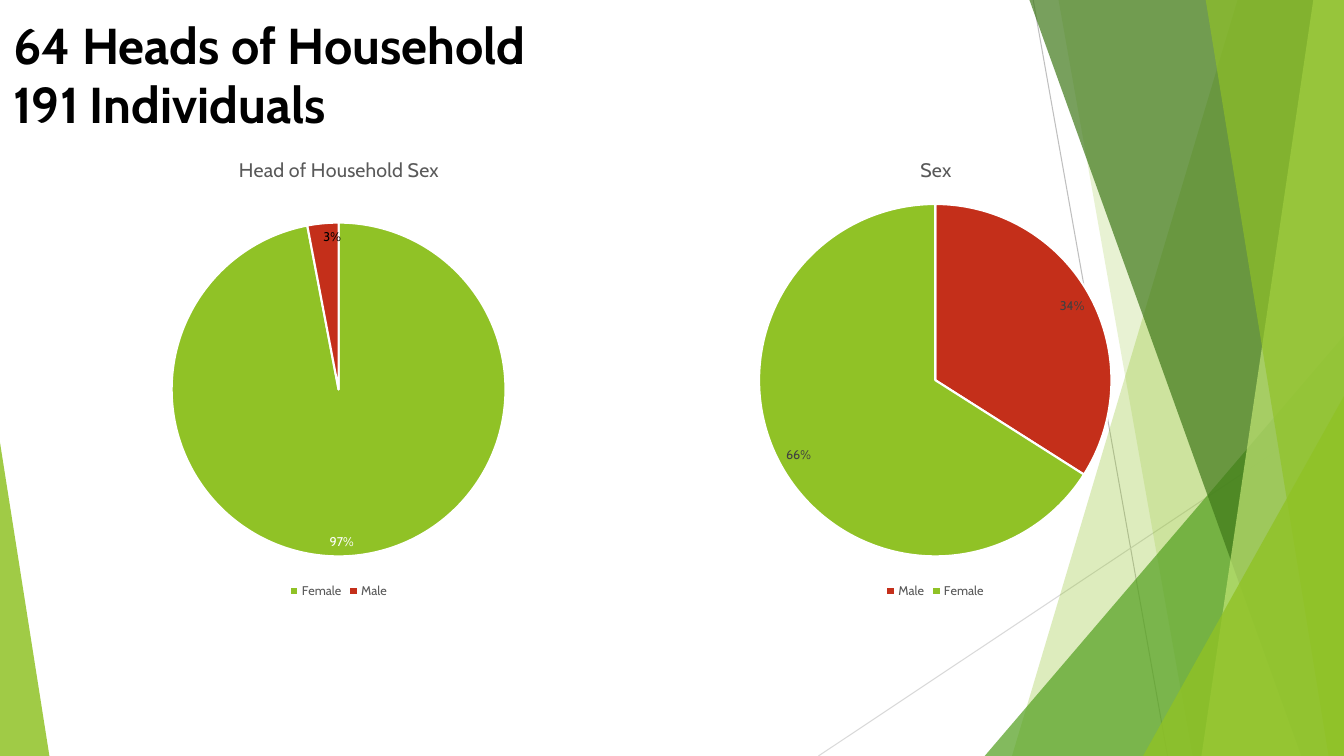
from lxml import etree
from pptx import Presentation
from pptx import util as u
from pptx.chart import data
from pptx.dml import color
from pptx.enum import chart as charts, shapes, text
from pptx.oxml import ns

GREEN, RED, LEAF = "90C226", "C42F1A", "54A021"
SEX_COLOURS = {"Female": GREEN, "Male": RED}
BLEED, BOTTOM, RIGHT = -0.7, 540, 960


class HouseholdSlide:
    """Draws the elements of one slide in a shared style, with lengths in points."""

    font = "Cabin"
    label_size = 9

    def __init__(self, deck):
        self.slide = deck.slides.add_slide(deck.slide_layouts[5])

    def apply(self, target, values):
        for name, value in values.items():
            setattr(target, name, value)

    def paint(self, fill, hex_colour, opacity=100):
        fill.solid()
        fill.fore_color.rgb = color.RGBColor.from_string(hex_colour)
        if opacity < 100:
            tint = fill._xPr.find(".//" + ns.qn("a:srgbClr"))
            etree.SubElement(tint, ns.qn("a:alpha"), val=str(opacity * 1000))

    def style_font(self, font, size, hex_colour, bold=False):
        self.apply(font, {"name": self.font, "size": u.Pt(size), "bold": bold})
        self.paint(font.fill, hex_colour)

    def finish(self, facet, hex_colour, opacity):
        facet.shadow.inherit = False
        self.paint(facet.fill, hex_colour, opacity)
        facet.line.fill.background()

    def ray(self, start, end, hex_colour):
        ends = [u.Pt(value) for value in (*start, *end)]
        ray = self.slide.shapes.add_connector(shapes.MSO_CONNECTOR.STRAIGHT, *ends)
        ray.line.width = u.Pt(0.75)
        self.paint(ray.line.fill, hex_colour)
        etree.SubElement(ray._element.spPr, ns.qn("a:effectLst"))

    def band(self, top_x, bottom_x, hex_colour, opacity):
        corners = [(top_x, BLEED), (RIGHT, BLEED), (RIGHT, BOTTOM), (bottom_x, BOTTOM)]
        first, *rest = [(u.Pt(x), u.Pt(y)) for x, y in corners]
        outline = self.slide.shapes.build_freeform(*first)
        outline.add_line_segments(rest, close=True)
        self.finish(outline.convert_to_shape(), hex_colour, opacity)

    def corner(self, left, top, width, apex, hex_colour, opacity):
        place = [u.Pt(value) for value in (left, top, width, BOTTOM - top)]
        corner = self.slide.shapes.add_shape(shapes.MSO_SHAPE.ISOSCELES_TRIANGLE, *place)
        corner.adjustments[0] = apex
        self.finish(corner, hex_colour, opacity)

    def headline(self, holder, wording, top, width):
        self.apply(holder, {"left": u.Pt(2.2), "top": u.Pt(top),
                            "width": u.Pt(width), "height": u.Pt(51)})
        frame = holder.text_frame
        frame.text = wording
        self.apply(frame, {"word_wrap": True, "vertical_anchor": text.MSO_ANCHOR.TOP,
                           "auto_size": text.MSO_AUTO_SIZE.SHAPE_TO_FIT_TEXT})
        frame.paragraphs[0].alignment = text.PP_ALIGN.LEFT
        self.style_font(frame.paragraphs[0].runs[0].font, 36, "000000", True)

    def title(self, wording, top, width):
        self.headline(self.slide.shapes.title, wording, top, width)

    def subtitle(self, wording, top, width):
        box = self.slide.shapes.add_textbox(0, 0, u.Pt(width), u.Pt(51))
        self.headline(box, wording, top, width)

    def arrange(self, part, position, **fractions):
        for old in part.findall(ns.qn("c:layout")):
            part.remove(old)
        layout = etree.Element(ns.qn("c:layout"))
        part.insert(position, layout)
        manual = etree.SubElement(layout, ns.qn("c:manualLayout"))
        if "w" in fractions:
            etree.SubElement(manual, ns.qn("c:layoutTarget"), val="inner")
        for axis in "xy":
            etree.SubElement(manual, ns.qn(f"c:{axis}Mode"), val="edge")
        for name, value in fractions.items():
            etree.SubElement(manual, ns.qn(f"c:{name}"), val=str(value))

    def hide_entry(self, legend, position, index):
        entry = etree.Element(ns.qn("c:legendEntry"))
        etree.SubElement(entry, ns.qn("c:idx"), val=str(index))
        etree.SubElement(entry, ns.qn("c:delete"), val="1")
        legend._element.insert(position, entry)

    def pie(self, heading, sexes, shares, place, heading_x, disc, label_colour, dark=()):
        table = data.CategoryChartData()
        table.categories = sexes
        table.add_series("Series 1", shares)
        frame = self.slide.shapes.add_chart(
            charts.XL_CHART_TYPE.PIE, *[u.Pt(value) for value in place], table)
        pie = frame.chart
        self.style_font(pie.font, 10, "000000")
        self.apply(pie, {"has_title": True, "has_legend": True})
        pie.chart_title.text_frame.text = heading
        self.style_font(pie.chart_title.text_frame.paragraphs[0].runs[0].font, 14, "595959")
        self.arrange(pie.chart_title._element, 1, x=heading_x, y=0.03)
        self.arrange(pie._chartSpace.chart.plotArea, 0, **disc)
        self.apply(pie.legend, {"position": charts.XL_LEGEND_POSITION.BOTTOM,
                                "include_in_layout": False})
        self.style_font(pie.legend.font, self.label_size, "595959")
        unnamed = [index for index, sex in enumerate(sexes) if not sex]
        for position, index in enumerate(unnamed, 1):
            self.hide_entry(pie.legend, position, index)
        pie.plots[0].vary_by_categories = True

        series = pie.plots[0].series[0]
        inside = charts.XL_LABEL_POSITION.INSIDE_END
        self.apply(series.data_labels, {
            "show_percentage": True, "show_value": False, "position": inside,
            "number_format": "0%", "number_format_is_linked": False})
        self.style_font(series.data_labels.font, self.label_size, label_colour)
        for index, sex in enumerate(sexes):
            if not sex:
                continue
            point = series.points[index]
            self.paint(point.format.fill, SEX_COLOURS[sex])
            self.paint(point.format.line.fill, "FFFFFF")
            point.format.line.width = u.Pt(1.5)
            if sex in dark:
                self.style_font(point.data_label.font, self.label_size, "000000")
                point.data_label.position = inside
        for name, shown in {"showVal": "0", "showPercent": "1"}.items():
            for flag in pie._chartSpace.xpath(f".//c:dLbl/c:{name}"):
                flag.set("val", shown)


def main():
    deck = Presentation()
    deck.slide_width, deck.slide_height = u.Pt(RIGHT), u.Pt(BOTTOM)
    page = HouseholdSlide(deck)

    page.ray((738, 0), (834, BOTTOM), "BFBFBF")
    page.ray((RIGHT, 290), (584.6, BOTTOM), "D9D9D9")
    page.band(884.2, 722.9, GREEN, 30)
    page.band(756, 851.8, GREEN, 20)
    page.corner(703.4, 239.8, 256.6, 1, LEAF, 72)
    page.band(735.1, 929.5, "3F7819", 70)
    page.band(938.2, 858.2, "C0E474", 70)
    page.band(861.1, 949, GREEN, 65)
    page.corner(816.5, 283, 143.5, 1, GREEN, 80)
    page.corner(0, 316.1, 35.3, 0, GREEN, 85)

    page.pie("Head of Household Sex", ["Female", "", "", "Male"], [97, None, None, 3],
             (-21.6, 99.4, 527, 331.2), 0.36,
             {"x": 0.27, "y": 0.18, "w": 0.46, "h": 0.72}, "FFFFFF", ("Male",))
    page.pie("Sex", ["Male", "Female"], [34, 66],
             (447.8, 99.4, 440.6, 331.2), 0.47,
             {"x": 0.21, "y": 0.14, "w": 0.58, "h": 0.76}, "404040")

    page.title("64 Heads of Household", 6.5, 420.5)
    page.subtitle("191 Individuals", 49, 288.7)
    deck.save("out.pptx")


if __name__ == "__main__":
    main()
